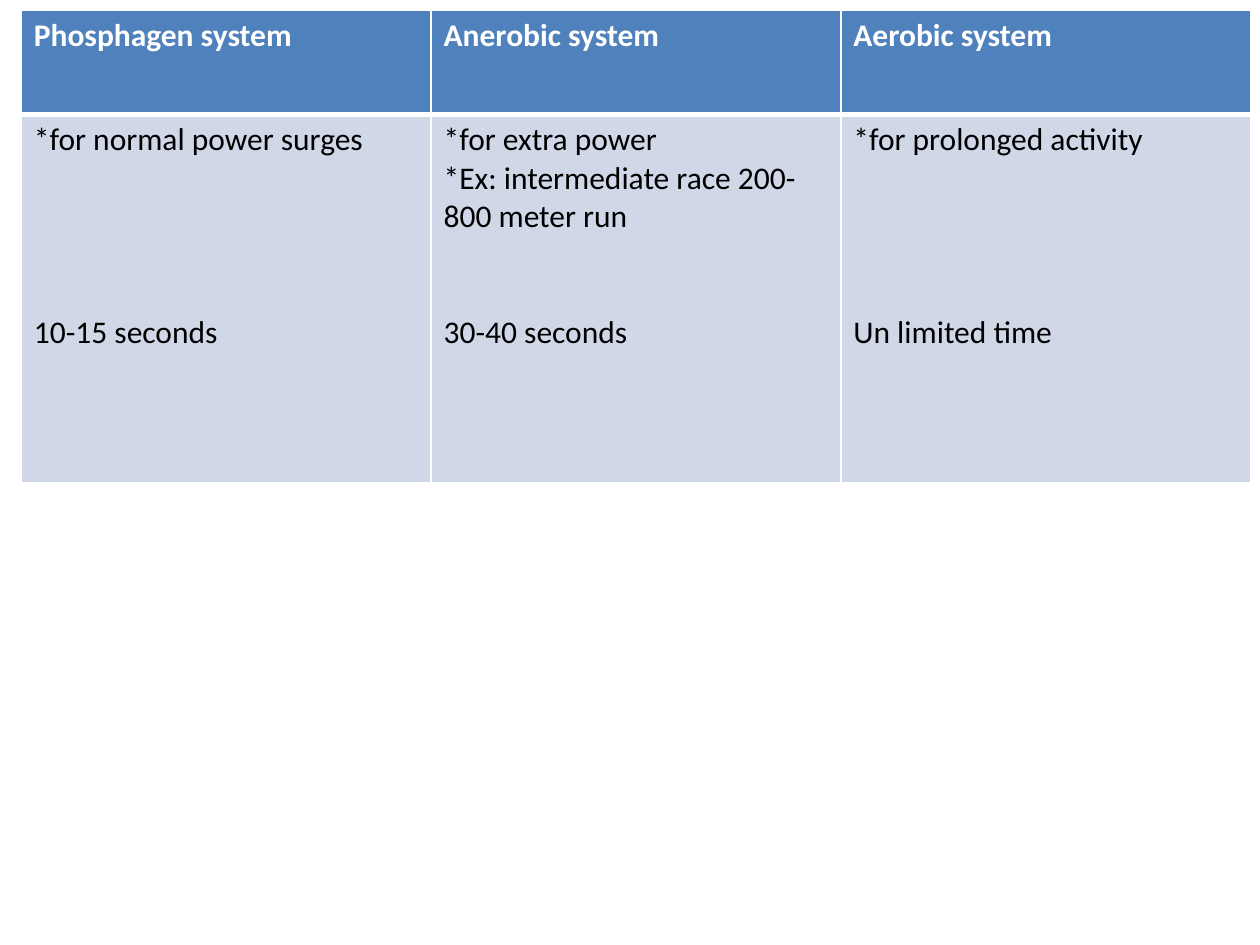
from lxml import etree
from pptx import Presentation
from pptx.dml.color import RGBColor
from pptx.oxml.ns import qn
from pptx.util import Cm, Pt

FONT = "Calibri"
TEXT_SIZE = 18
LINE_HEIGHT = 22
WHITE, BLACK, HEADER_BLUE, BODY_BLUE = "FFFFFF", "000000", "4F81BD", "D0D8E8"
COLUMN_WIDTH = Cm(8.26)
HEADER_HEIGHT, BODY_HEIGHT = Cm(2.11), Cm(7.42)

# Each system: name, uses, duration
SYSTEMS = [
    ("Phosphagen system", ["*for normal power surges"], "10-15 seconds"),
    (
        "Anerobic system",
        ["*for extra power", "*Ex: intermediate race 200-800 meter run"],
        "30-40 seconds",
    ),
    ("Aerobic system", ["*for prolonged activity"], "Un limited time"),
]
DURATION_GAPS = [4, 2, 4]


def color(hex_value):
    """Turn a hex string into a colour."""
    return RGBColor.from_string(hex_value)


def set_borders(cell, top, bottom):
    """Draw white borders, with the given widths in points above and below."""
    properties = cell._tc.get_or_add_tcPr()
    widths = {"a:lnL": 1, "a:lnR": 1, "a:lnT": top, "a:lnB": bottom}
    for position, (side, width) in enumerate(widths.items()):
        border = etree.Element(qn(side), w=str(Pt(width)))
        fill = etree.SubElement(border, qn("a:solidFill"))
        etree.SubElement(fill, qn("a:srgbClr"), val=WHITE)
        properties.insert(position, border)


def fill_cell(cell, lines, background, text_color, bold):
    """Write the lines into a cell and format them."""
    cell.fill.solid()
    cell.fill.fore_color.rgb = color(background)
    cell.text_frame.text = "\n".join(lines)
    for paragraph in cell.text_frame.paragraphs:
        for run in paragraph.runs:
            run.font.name = FONT
            run.font.size = Pt(TEXT_SIZE)
            run.font.bold = bold
            run.font.color.rgb = color(text_color)


def add_systems_table(slide):
    """Add the comparison table, one column per energy system."""
    table = slide.shapes.add_table(
        2, len(SYSTEMS), Cm(0.43), Cm(0.2),
        COLUMN_WIDTH * len(SYSTEMS), HEADER_HEIGHT + BODY_HEIGHT,
    ).table
    table.rows[0].height = HEADER_HEIGHT
    table.rows[1].height = BODY_HEIGHT
    for index, (name, uses, duration) in enumerate(SYSTEMS):
        table.columns[index].width = COLUMN_WIDTH
        header, body = table.cell(0, index), table.cell(1, index)
        fill_cell(header, [name], HEADER_BLUE, WHITE, True)
        set_borders(header, 1, 3)
        fill_cell(body, uses + [duration], BODY_BLUE, BLACK, False)
        set_borders(body, 3, 1)
        gap = Pt(DURATION_GAPS[index] * LINE_HEIGHT)
        body.text_frame.paragraphs[-1].space_before = gap


def main():
    """Build the slide and save it."""
    presentation = Presentation()
    presentation.slide_width = Cm(25.4)
    presentation.slide_height = Cm(19.05)
    slide = presentation.slides.add_slide(presentation.slide_layouts[6])
    add_systems_table(slide)
    presentation.save("out.pptx")


if __name__ == "__main__":
    main()
